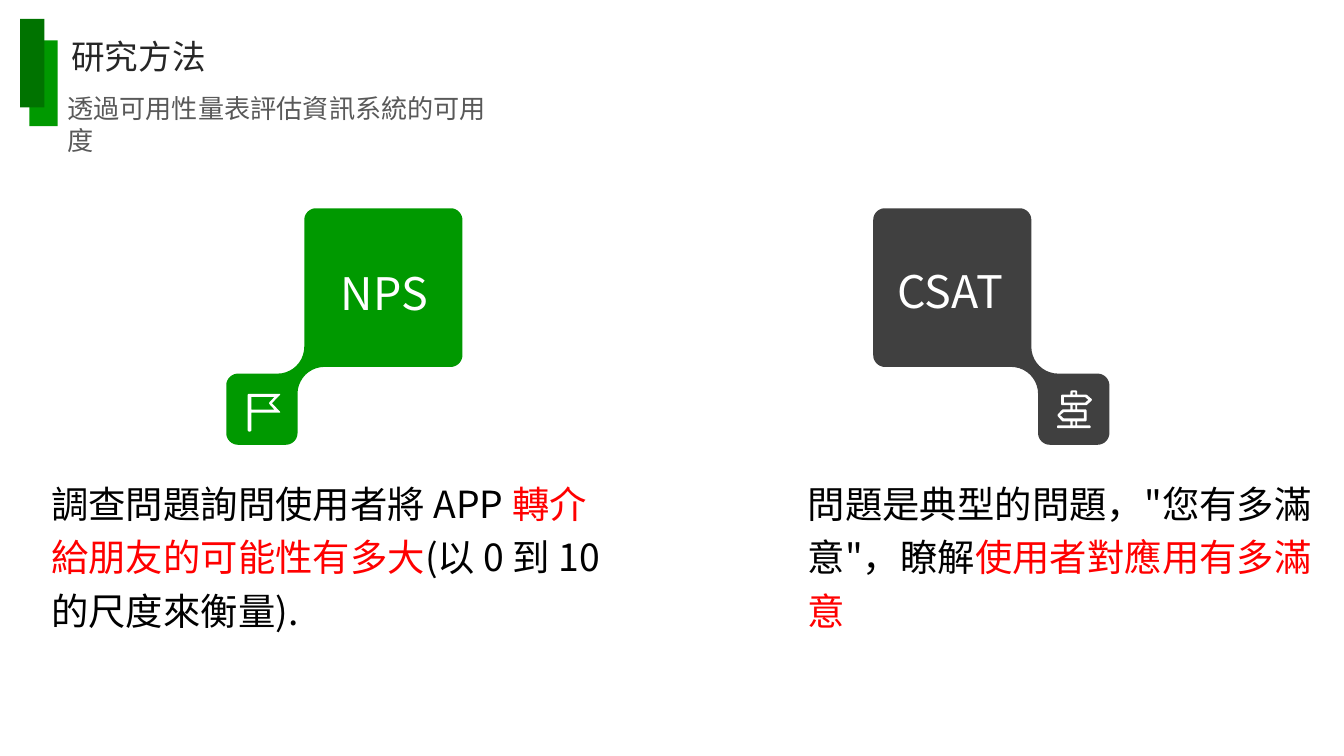
from math import cos, pi, sin

from lxml import etree
from pptx import Presentation
from pptx.dml.color import RGBColor
from pptx.enum.shapes import MSO_SHAPE
from pptx.enum.text import MSO_ANCHOR, MSO_AUTO_SIZE, PP_ALIGN
from pptx.oxml.ns import qn
from pptx.util import Pt

FONT = "Noto Sans CJK SC"
COLORS = {
    "green": "009900", "dark green": "007300", "gray": "404040",
    "white": "FFFFFF", "black": "000000", "red": "FF0000",
    "title": "262626", "subtitle": "595959",
}

# Content: box is left, top, width, height; runs are (text, colour)
TITLE = {"box": (38.2, 19.4, 218.9, 21.6), "size": 18,
         "runs": [("研究方法", "title")]}
TEXTS = [
    {"box": (36, 49.7, 238.3, 17.3), "size": 14,
     "runs": [("透過可用性量表評估資訊系統的可用度", "subtitle")]},
    {"box": (172.1, 142.6, 67.7, 28.8), "size": 24, "align": PP_ALIGN.CENTER,
     "runs": [("NPS", "white")]},
    {"box": (475.2, 141.1, 67.7, 28.8), "size": 24, "align": PP_ALIGN.CENTER,
     "runs": [("CSAT", "white")]},
    {"box": (27.4, 252.7, 300.2, 87.1), "size": 20, "spacing": 1.2,
     "runs": [("調查問題詢問使用者將 APP ", "black"),
              ("轉介給朋友的可能性有多大", "red"),
              ("(以 0 到 10 的尺度來衡量).", "black")]},
    {"box": (432.7, 252.7, 272.2, 87.1), "size": 20, "spacing": 1.2,
     "runs": [("問題是典型的問題，\"您有多滿意\"，瞭解", "black"),
              ("使用者對應用有多滿意", "red")]},
]
BARS = [((15.8, 21.6, 15.1, 46.1), "green"),
        ((10.8, 10.1, 13, 47.5), "dark green")]


def rectangle(left, top, right, bottom):
    return [(left, top, 0), (right, top, 0), (right, bottom, 0), (left, bottom, 0)]


# Outlines: contours of (x, y, corner radius)
BADGE_WIDTH = 126.5
BADGE = [[
    (41.8, 0, 6.3), (41.8, 88.6, 14.4), (0, 88.6, 6.3), (0, 126.7, 6.3),
    (38.2, 126.7, 6.3), (38.2, 85, 14.4), (BADGE_WIDTH, 85, 6.3), (BADGE_WIDTH, 0, 6.3),
]]
FLAG = [
    [(0, 0, 0.7), (17.8, 0, 0.8), (13, 5, 0), (17.8, 10.1, 0.8),
     (2, 10.1, 0), (2, 20.2, 0.9), (0, 20.2, 0.9)],
    [(2, 1.6, 0), (14.4, 1.6, 0), (11.2, 5, 0.8), (14.4, 8.5, 0), (2, 8.5, 0)],
]
SIGNPOST = [
    [(7.2, 0, 0.7), (10.8, 0, 0.7), (10.8, 2.2, 0), (15.8, 2.2, 0.5),
     (19, 5, 0.8), (15.8, 7.9, 0.5), (10.8, 7.9, 0), (10.8, 10.1, 0),
     (15.8, 10.1, 0.7), (15.8, 16.6, 0.7), (10.8, 16.6, 0), (10.8, 18.7, 0),
     (18, 18.7, 0.7), (18, 20.2, 0.7), (0, 20.2, 0.7), (0, 18.7, 0.7),
     (7.2, 18.7, 0), (7.2, 16.6, 0), (2.9, 16.6, 0.5), (0, 13.3, 0.8),
     (2.9, 10.1, 0.5), (7.2, 10.1, 0), (7.2, 7.9, 0), (2.2, 7.9, 0.7),
     (2.2, 2.2, 0.7), (7.2, 2.2, 0)],
    rectangle(8.4, 1, 9.8, 2.2),
    rectangle(8.4, 7.9, 9.8, 10.1),
    rectangle(8.4, 16.6, 9.8, 18.7),
    [(3.6, 3.6, 0), (15.1, 3.6, 0), (16.8, 5, 0), (15.1, 6.5, 0), (3.6, 6.5, 0)],
    [(1.6, 13.2, 0), (3.6, 11.6, 0), (14.4, 11.6, 0), (14.4, 15, 0), (3.6, 15, 0)],
]
# Outline, left, top, colour, width to mirror across (None keeps direction)
FIGURES = [
    (BADGE, 121.2, 111.6, "green", None),
    (BADGE, 467.8, 111.6, "gray", BADGE_WIDTH),
    (SIGNPOST, 566.3, 209.2, "white", None),
    (FLAG, 132.7, 211, "white", None),
]


def paint(shape, color):
    shape.shadow.inherit = False
    shape.fill.solid()
    shape.fill.fore_color.rgb = RGBColor.from_string(COLORS[color])
    shape.line.fill.background()


def toward(start, end):
    dx, dy = end[0] - start[0], end[1] - start[1]
    length = (dx * dx + dy * dy) ** 0.5
    return dx / length, dy / length


def round_corners(contour, steps=10):
    """Replace each rounded corner with points along an arc."""
    points = []
    for index, corner in enumerate(contour):
        x, y, radius = corner
        if not radius:
            points.append((x, y))
            continue
        before = toward(corner, contour[index - 1])
        after = toward(corner, contour[(index + 1) % len(contour)])
        for step in range(steps + 1):
            angle = pi / 2 * step / steps
            back, ahead = radius * (1 - sin(angle)), radius * (1 - cos(angle))
            points.append((x + back * before[0] + ahead * after[0],
                           y + back * before[1] + ahead * after[1]))
    return points


def add_figure(slide, contours, left, top, color, mirror_width):
    builder = None
    for contour in contours:
        points = [(Pt(left + (x if mirror_width is None else mirror_width - x)), Pt(top + y))
                  for x, y in round_corners(contour)]
        if builder is None:
            builder = slide.shapes.build_freeform(*points[0])
        else:
            builder.move_to(*points[0])
        builder.add_line_segments(points[1:], close=True)
    paint(builder.convert_to_shape(), color)


def fill_text(shape, content):
    shape.left, shape.top, shape.width, shape.height = map(Pt, content["box"])
    frame = shape.text_frame
    frame_format = {
        "margin_left": 0, "margin_top": 0, "margin_right": 0, "margin_bottom": 0,
        "word_wrap": True, "vertical_anchor": MSO_ANCHOR.TOP,
        "auto_size": MSO_AUTO_SIZE.SHAPE_TO_FIT_TEXT,
    }
    for name, value in frame_format.items():
        setattr(frame, name, value)
    paragraph = frame.paragraphs[0]
    paragraph.alignment = content.get("align", PP_ALIGN.LEFT)
    paragraph.line_spacing = content.get("spacing", 1.0)
    for text, color in content["runs"]:
        run = paragraph.add_run()
        run.text = text
        for name, value in {"name": FONT, "size": Pt(content["size"])}.items():
            setattr(run.font, name, value)
        run.font.color.rgb = RGBColor.from_string(COLORS[color])
        # East Asian typeface
        etree.SubElement(run._r.get_or_add_rPr(), qn("a:ea"), typeface=FONT)


def main():
    presentation = Presentation()
    presentation.slide_width, presentation.slide_height = Pt(720), Pt(405)
    slide = presentation.slides.add_slide(presentation.slide_layouts[5])

    # Title
    fill_text(slide.shapes.title, TITLE)

    # Badges and icons
    for figure in FIGURES:
        add_figure(slide, *figure)

    # Header bars
    for box, color in BARS:
        paint(slide.shapes.add_shape(MSO_SHAPE.RECTANGLE, *map(Pt, box)), color)

    # Subtitle, badge labels and descriptions
    for content in TEXTS:
        fill_text(slide.shapes.add_textbox(*map(Pt, content["box"])), content)

    presentation.save("out.pptx")


if __name__ == "__main__":
    main()
